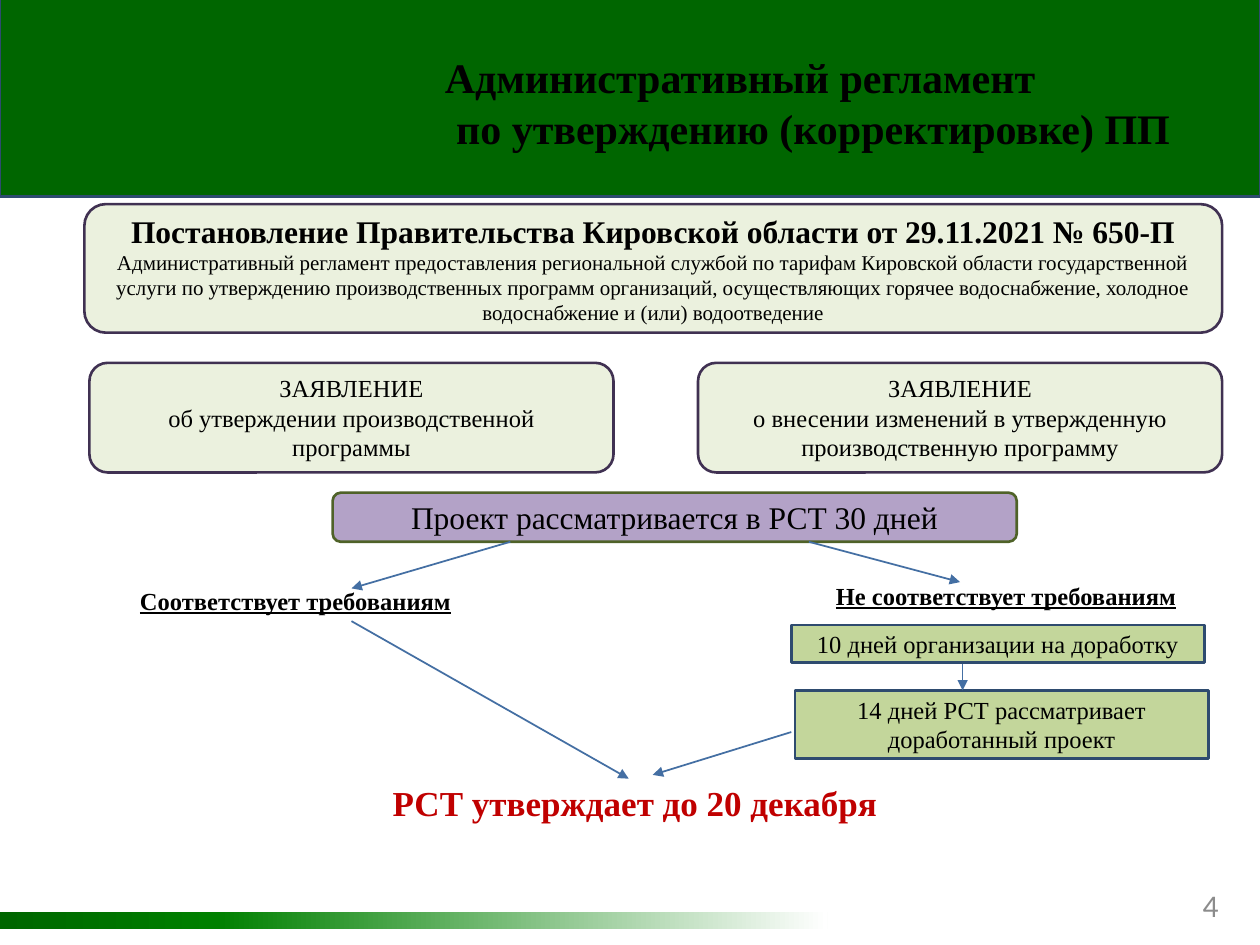
import copy

import pptx
import pptx.dml.color
import pptx.enum.shapes
import pptx.enum.text
import pptx.oxml
import pptx.oxml.ns
import pptx.util

Inches = pptx.util.Inches
Pt = pptx.util.Pt
KIND = pptx.enum.shapes.MSO_SHAPE
ALIGN = pptx.enum.text.PP_ALIGN
ANCHOR = pptx.enum.text.MSO_ANCHOR
FIT = pptx.enum.text.MSO_AUTO_SIZE

COLORS = {
    "band": "006600", "mid": "008000", "white": "FFFFFF",
    "navy": "2E4B6F", "cream": "EBF1DE", "plum": "403152",
    "lilac": "B3A2C7", "olive": "4F6228", "lime": "C3D69B",
    "arrow": "446FA3", "black": "000000", "red": "C00000", "gray": "8C8C8C",
}


def color(name):
    return pptx.dml.color.RGBColor.from_string(COLORS[name])


class Board:
    """Holds the text style and the current slide."""

    font = "Times New Roman"

    def __init__(self, slide):
        self.slide = slide
        self.shapes = slide.shapes

    def set_text(self, frame, text, sizes, ink="black", bold=(False,),
                 align=ALIGN.CENTER, font=None, under=None):
        """Fill a frame; sizes and bold go by paragraph, the last one repeating."""
        frame.word_wrap = True
        frame.text = text
        for i, para in enumerate(frame.paragraphs):
            para.alignment = align
            for run in para.runs:
                run.font.name = font or self.font
                run.font.size = Pt(sizes[min(i, len(sizes) - 1)])
                run.font.bold = bold[min(i, len(bold) - 1)]
                run.font.underline = under
                run.font.color.rgb = color(ink)

    def title(self, text, x, y, w, h):
        box = self.shapes.title
        # Bring the title in front of the header band
        self.shapes._spTree.append(box._element)
        box.left, box.top, box.width, box.height = map(Inches, (x, y, w, h))
        frame = box.text_frame
        self.set_text(frame, text, [24], bold=[True], align=ALIGN.LEFT)
        frame.vertical_anchor = ANCHOR.TOP
        frame.auto_size = FIT.NONE
        props = frame.paragraphs[0]._p.get_or_add_pPr()
        props.set("marL", str(Inches(0.17)))
        props.set("indent", str(Inches(-0.09)))

    def label(self, text, x, y, w, h, size, fit=FIT.SHAPE_TO_FIT_TEXT,
              anchor=ANCHOR.TOP, **style):
        box = self.shapes.add_textbox(*map(Inches, (x, y, w, h)))
        self.set_text(box.text_frame, text, [size], **style)
        box.text_frame.auto_size = fit
        box.text_frame.vertical_anchor = anchor

    def block(self, kind, x, y, w, h, fill, edge, text="", sizes=(14,), **style):
        box = self.shapes.add_shape(kind, *map(Inches, (x, y, w, h)))
        box.shadow.inherit = False
        box.fill.solid()
        box.fill.fore_color.rgb = color(fill)
        box.line.color.rgb = color(edge)
        box.line.width = Pt(1.5)
        if text:
            box.text_frame.vertical_anchor = ANCHOR.MIDDLE
            self.set_text(box.text_frame, text, sizes, **style)

    def fade(self, x, y, w, h, stops):
        """Add a bar with a left-to-right gradient of (position, colour) stops."""
        bar = self.shapes.add_shape(KIND.RECTANGLE, *map(Inches, (x, y, w, h)))
        bar.shadow.inherit = False
        bar.line.fill.background()
        bar.fill.gradient()
        bar.fill.gradient_angle = 0
        items = bar._element.spPr.find(".//" + pptx.oxml.ns.qn("a:gsLst"))
        while len(items) < len(stops):
            items.append(copy.deepcopy(items[-1]))
        for stop, (place, name) in zip(bar.fill.gradient_stops, stops):
            stop.position = place
            stop.color.rgb = color(name)

    def arrow(self, x1, y1, x2, y2):
        line = self.shapes.add_connector(
            pptx.enum.shapes.MSO_CONNECTOR.STRAIGHT,
            *map(Inches, (x1, y1, x2, y2)))
        line.line.color.rgb = color("arrow")
        line.line.width = Pt(1)
        tail = pptx.oxml.parse_xml(
            f'<a:tailEnd {pptx.oxml.ns.nsdecls("a")} type="triangle"/>')
        line.line._get_or_add_ln().append(tail)
        line._element.spPr.append(pptx.oxml.parse_xml(
            f'<a:effectLst {pptx.oxml.ns.nsdecls("a")}/>'))


def main():
    deck = pptx.Presentation()
    deck.slide_width, deck.slide_height = Inches(10), Inches(7.5)
    board = Board(deck.slides.add_slide(deck.slide_layouts[5]))

    board.block(KIND.RECTANGLE, 0, -0.03, 10, 1.59, "band", "navy")
    board.fade(0, 7.24, 6.57, 0.13, [(0, "band"), (0.26, "mid"), (1, "white")])
    board.label("4", 9.17, 6.98, 0.6, 0.4, 18, fit=FIT.NONE,
                anchor=ANCHOR.MIDDLE, ink="gray", align=ALIGN.RIGHT,
                font="Calibri")
    board.title("Административный регламент\vпо утверждению (корректировке) ПП",
                3.35, 0.36, 6.22, 0.91)

    # Decree and the two kinds of application
    board.block(
        KIND.ROUNDED_RECTANGLE, 0.67, 1.62, 9.03, 1.02, "cream", "plum",
        "Постановление Правительства Кировской области от 29.11.2021 № 650-П\n"
        "Административный регламент предоставления региональной службой по "
        "тарифам Кировской области государственной услуги по утверждению "
        "производственных программ организаций, осуществляющих горячее "
        "водоснабжение, холодное водоснабжение и (или) водоотведение",
        sizes=(18, 12), bold=(True, False))
    claims = [
        (0.71, "об утверждении производственной программы"),
        (5.54, "о внесении изменений в утвержденную производственную программу"),
    ]
    for x, text in claims:
        board.block(KIND.ROUNDED_RECTANGLE, x, 2.88, 4.16, 0.87,
                    "cream", "plum", "ЗАЯВЛЕНИЕ\n" + text)

    # Review and its two outcomes
    board.block(KIND.ROUNDED_RECTANGLE, 2.64, 3.91, 5.43, 0.39, "lilac", "olive",
                "Проект рассматривается в РСТ 30 дней", sizes=(18,))
    outcomes = [
        (0.64, 4.6, "Соответствует требованиям"),
        (6.28, 4.56, "Не соответствует требованиям"),
    ]
    for x, y, text in outcomes:
        board.label(text, x, y, 3.41, 0.34, 14, bold=[True], under=True)
    steps = [
        (6.28, 4.96, 0.3, "10 дней организации на доработку"),
        (6.31, 5.48, 0.54, "14 дней РСТ рассматривает доработанный проект"),
    ]
    for x, y, h, text in steps:
        board.block(KIND.RECTANGLE, x, y, 3.28, h, "lime", "navy", text)

    arrows = [
        (4.05, 4.3, 2.79, 4.67), (6.42, 4.3, 7.62, 4.62),
        (7.64, 5.27, 7.64, 5.48), (6.28, 5.81, 5.18, 6.15),
        (2.79, 4.93, 4.99, 6.18),
    ]
    for ends in arrows:
        board.arrow(*ends)
    board.label("РСТ утверждает до 20 декабря", 2.64, 6.15, 4.8, 0.44, 20,
                ink="red", bold=[True])

    deck.save("out.pptx")


if __name__ == "__main__":
    main()
